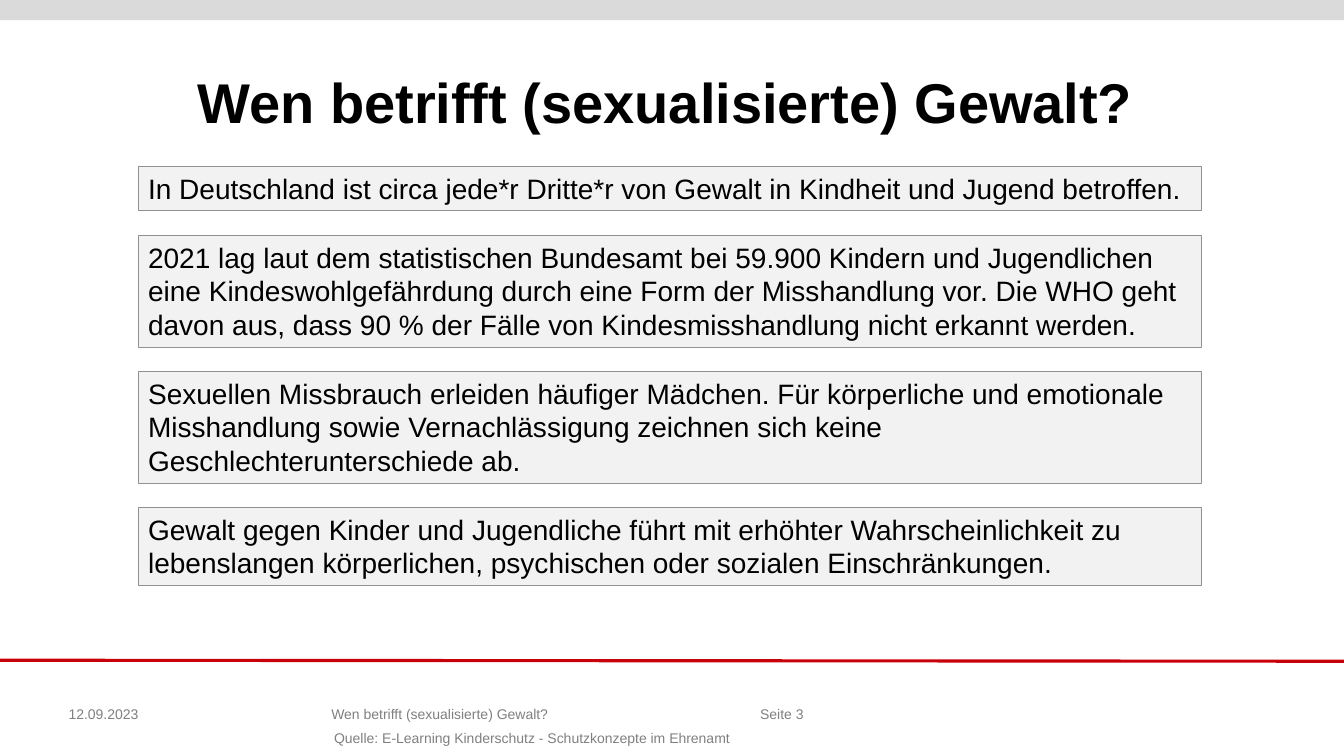
from lxml import etree
from pptx import Presentation
from pptx.dml.color import RGBColor
from pptx.enum import shapes, text
from pptx.oxml import ns
from pptx.util import Inches, Pt

WIDTH, HEIGHT = 13.33, 7.5
LEFT, COLUMN = 1.37, 10.55
TITLE = "Wen betrifft (sexualisierte) Gewalt?"

# Statement and the number of lines it fills
STATEMENTS = [
    ("In Deutschland ist circa jede*r Dritte*r von Gewalt in Kindheit und Jugend betroffen.", 1),
    ("2021 lag laut dem statistischen Bundesamt bei 59.900 Kindern und Jugendlichen eine "
     "Kindeswohlgefährdung durch eine Form der Misshandlung vor. Die WHO geht davon aus, "
     "dass 90 % der Fälle von Kindesmisshandlung nicht erkannt werden.", 3),
    ("Sexuellen Missbrauch erleiden häufiger Mädchen. Für körperliche und emotionale "
     "Misshandlung sowie Vernachlässigung zeichnen sich keine Geschlechterunterschiede ab.", 3),
    ("Gewalt gegen Kinder und Jugendliche führt mit erhöhter Wahrscheinlichkeit zu "
     "lebenslangen körperlichen, psychischen oder sozialen Einschränkungen.", 2),
]
FIRST_TOP, LINE_HEIGHT, PADDING, GAP = 1.65, 1 / 3, 0.11, 0.24

ALIGN = text.PP_ALIGN
# Text, left, top, width, height, left inset, alignment
FOOTERS = [
    ("12.09.2023", 0.68, 6.68, 1.25, 0.49, 0, ALIGN.LEFT),
    (TITLE, 1.93, 6.68, 4.72, 0.49, 0.14, ALIGN.CENTER),
    ("Seite 3", 6.66, 6.68, 1.31, 0.49, 0.1, ALIGN.RIGHT),
    ("Quelle: E-Learning Kinderschutz - Schutzkonzepte im Ehrenamt",
     1.4, 7.08, 7.65, 0.32, 0.1, ALIGN.CENTER),
]


def color(value):
    return RGBColor.from_string(value)


def place(*lengths):
    return [Inches(length) for length in lengths]


def write(box, words, size, ink, align, anchor, insets, bold=False):
    """Fill a box with one paragraph; insets run left, top, right, bottom."""
    frame = box.text_frame
    frame.word_wrap = True
    frame.auto_size = text.MSO_AUTO_SIZE.NONE
    frame.vertical_anchor = anchor
    (frame.margin_left, frame.margin_top,
     frame.margin_right, frame.margin_bottom) = place(*insets)
    frame.text = words
    para = frame.paragraphs[0]
    para.alignment = align
    font = para.font
    font.name, font.size, font.bold = "Arial", Pt(size), bold
    font.color.rgb = color(ink)
    return para


def add_panel(page, area, fill, border=None):
    panel = page.shapes.add_shape(shapes.MSO_SHAPE.RECTANGLE, *place(*area))
    panel.shadow.inherit = False
    panel.fill.solid()
    panel.fill.fore_color.rgb = color(fill)
    if border:
        panel.line.color.rgb = color(border)
        panel.line.width = Pt(0.75)
    else:
        panel.line.fill.background()
    return panel


def main():
    deck = Presentation()
    deck.slide_width, deck.slide_height = place(WIDTH, HEIGHT)
    page = deck.slides.add_slide(deck.slide_layouts.get_by_name("Title Only"))

    add_panel(page, (0, 0, WIDTH, 0.2), "DADADA")
    rule = page.shapes.add_connector(
        shapes.MSO_CONNECTOR.STRAIGHT, *place(0, 6.55, WIDTH, 6.56))
    rule.line.color.rgb = color("C8000A")
    rule.line.width = Pt(2.25)
    etree.SubElement(rule._element.spPr, ns.qn("a:effectLst"))

    title = page.shapes.title
    title.left, title.top, title.width, title.height = place(LEFT, 0.49, COLUMN, 0.91)
    heading = write(title, TITLE, 40, "000000", ALIGN.CENTER,
                    text.MSO_ANCHOR.BOTTOM, (0, 0.05, 0.1, 0.05), bold=True)
    heading.line_spacing = 0.9

    top = FIRST_TOP
    for statement, lines in STATEMENTS:
        height = PADDING + lines * LINE_HEIGHT
        panel = add_panel(page, (LEFT, top, COLUMN, height), "F2F2F2", "919191")
        write(panel, statement, 20, "000000", ALIGN.LEFT,
              text.MSO_ANCHOR.TOP, (0.1, 0.05, 0.1, 0.05))
        top += height + GAP

    for words, left, top, width, height, inset, align in FOOTERS:
        box = page.shapes.add_textbox(*place(left, top, width, height))
        write(box, words, 10, "808080", align,
              text.MSO_ANCHOR.BOTTOM, (inset, 0.05, 0, 0))

    deck.save("out.pptx")


if __name__ == "__main__":
    main()
